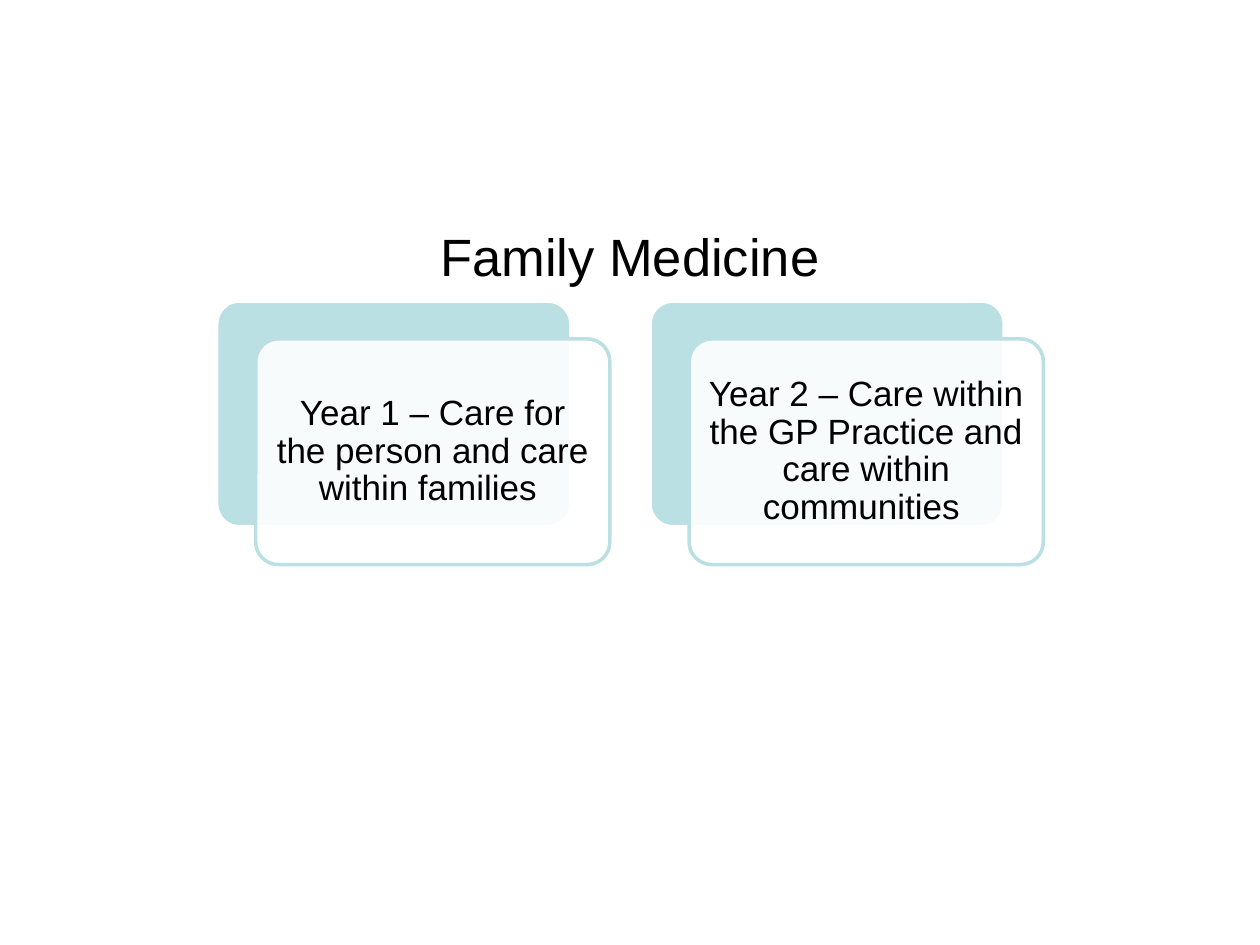
from lxml.etree import SubElement
from pptx import Presentation
from pptx.dml.color import RGBColor
from pptx.enum.shapes import MSO_SHAPE
from pptx.enum.text import MSO_ANCHOR, MSO_AUTO_SIZE, PP_ALIGN
from pptx.oxml.ns import qn
from pptx.util import Inches, Pt

BLACK = RGBColor(0x00, 0x00, 0x00)
WHITE = RGBColor(0xFF, 0xFF, 0xFF)
TEAL = RGBColor(0xBB, 0xE0, 0xE3)

YEARS = [
    "Year 1 – Care for the person and care within families ",
    "Year 2 – Care within the GP Practice and care within communities ",
]


def write_text(text_frame, text, *, size, font="Arial", color=BLACK,
               inset=0.05, line_spacing=1.0):
    """Fill a frame with one centred paragraph."""
    text_frame.word_wrap = True
    text_frame.auto_size = MSO_AUTO_SIZE.NONE
    text_frame.vertical_anchor = MSO_ANCHOR.MIDDLE
    text_frame.margin_left = text_frame.margin_right = Inches(inset)
    text_frame.margin_top = text_frame.margin_bottom = Inches(inset)
    paragraph = text_frame.paragraphs[0]
    paragraph.text = text
    paragraph.alignment = PP_ALIGN.CENTER
    paragraph.line_spacing = line_spacing
    run_font = paragraph.runs[0].font
    run_font.name = font
    run_font.size = Pt(size)
    run_font.color.rgb = color


class SlideBuilder:
    """Holds the style and the current slide."""

    card_width, card_height = 2.81, 1.79
    corner = 0.1
    line_width = 2
    title_size, card_size = 30, 20

    def __init__(self, slide):
        self.slide = slide

    def title(self, text, left, top, width, height):
        title = self.slide.shapes.title
        title.left, title.top = Inches(left), Inches(top)
        title.width, title.height = Inches(width), Inches(height)
        write_text(title.text_frame, text, size=self.title_size)

    def panel(self, left, top, fill, line, opacity=100):
        shape = self.slide.shapes.add_shape(
            MSO_SHAPE.ROUNDED_RECTANGLE, Inches(left), Inches(top),
            Inches(self.card_width), Inches(self.card_height))
        shape.adjustments[0] = self.corner
        shape.shadow.inherit = False
        shape.fill.solid()
        shape.fill.fore_color.rgb = fill
        shape.line.color.rgb = line
        shape.line.width = Pt(self.line_width)
        if opacity < 100:
            color = shape.fill._xPr.find(qn("a:solidFill"))[0]
            SubElement(color, qn("a:alpha"), val=str(opacity * 1000))
        return shape

    def card(self, text, left, top, offset=0.31):
        """A solid panel with a translucent text panel shifted over it."""
        self.panel(left, top, TEAL, WHITE)
        front = self.panel(left + offset, top + 0.3, WHITE, TEAL, opacity=90)
        write_text(front.text_frame, text, size=self.card_size,
                   inset=0.08, line_spacing=0.9)


def main():
    presentation = Presentation()
    presentation.slide_width = Inches(10)
    presentation.slide_height = Inches(7.5)
    slide = presentation.slides.add_slide(presentation.slide_layouts[5])
    builder = SlideBuilder(slide)

    # Heading
    builder.title("Family Medicine", 0.94, 1.75, 8.12, 0.56)

    # One card for each year
    for index, text in enumerate(YEARS):
        builder.card(text, 1.72 + index * 3.44, 2.39)

    presentation.save("out.pptx")


if __name__ == "__main__":
    main()
